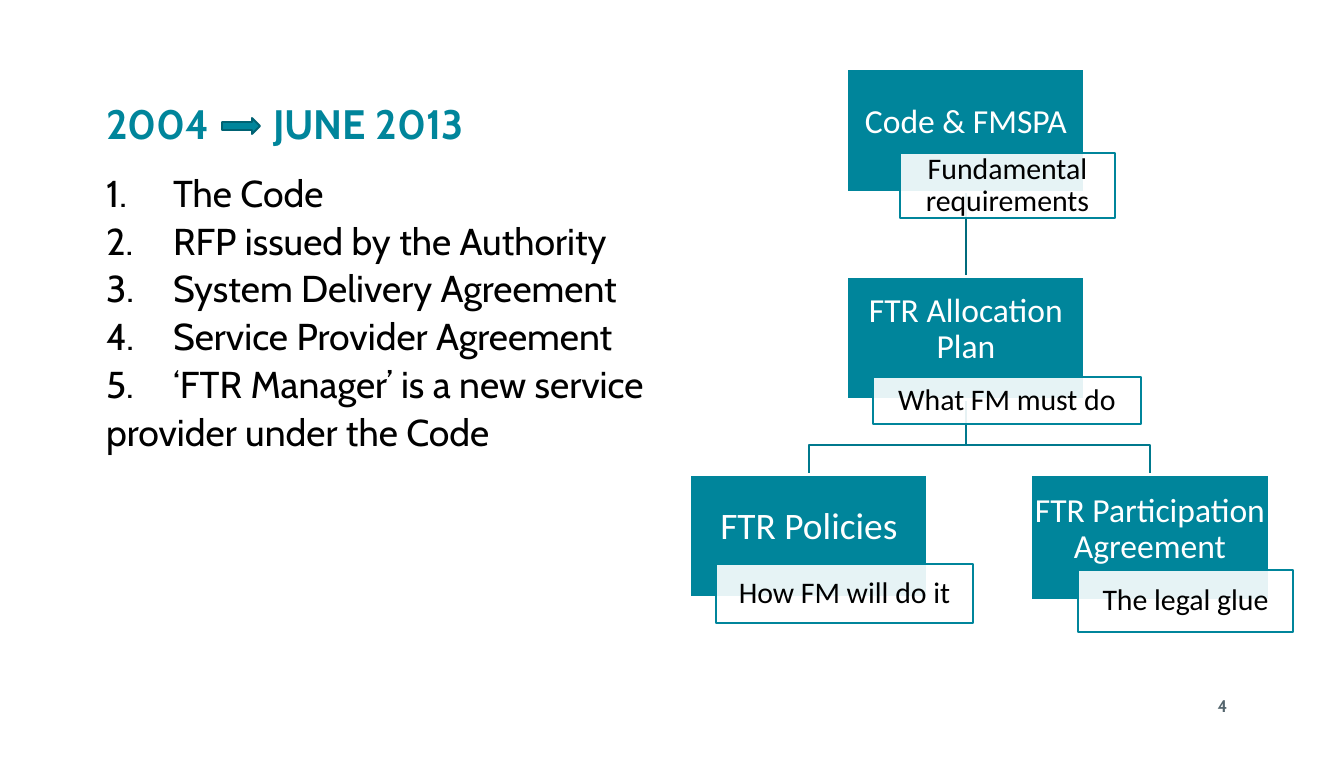
import dataclasses

import lxml.etree
import pptx
import pptx.dml.color
import pptx.enum.shapes
import pptx.enum.text
import pptx.oxml.ns
import pptx.util

RGB = pptx.dml.color.RGBColor.from_string
SHAPE = pptx.enum.shapes.MSO_SHAPE
ALIGN = pptx.enum.text.PP_ALIGN
ANCHOR = pptx.enum.text.MSO_ANCHOR
qn = pptx.oxml.ns.qn
PX = 914400 / 134.4  # EMU per px


@dataclasses.dataclass(frozen=True)
class Theme:
    teal: str = "00859B"
    teal_dark: str = "006273"
    branch: str = "00798D"
    trunk: str = "006B7C"
    white: str = "FFFFFF"
    black: str = "000000"
    grey: str = "54656D"
    heading: str = "Cabin"
    diagram: str = "Calibri"
    title: int = 22
    body: int = 20
    node: int = 18
    label: int = 16
    number: int = 9


theme = Theme()


def px(*lengths):
    return [pptx.util.Emu(round(n * PX)) for n in lengths]


def write(sp, text, size, color, font=theme.heading, bold=False, align=ALIGN.LEFT,
          anchor=ANCHOR.MIDDLE, insets=(13, 7, 13, 7), spacing=0.9, before=0,
          numbered=0, tab=0):
    """Fill a shape, one paragraph per line; the first `numbered` lines are a list."""
    tf = sp.text_frame
    tf.word_wrap = True
    tf.auto_size = pptx.enum.text.MSO_AUTO_SIZE.NONE
    tf.vertical_anchor = anchor
    tf.margin_left, tf.margin_top, tf.margin_right, tf.margin_bottom = px(*insets)
    for i, line in enumerate(text.split("\n")):
        p = tf.paragraphs[0] if i == 0 else tf.add_paragraph()
        pPr = p._p.get_or_add_pPr()
        if i < numbered:
            indent, = px(67)
            pPr.set("marL", str(indent))
            pPr.set("indent", str(-indent))
            lxml.etree.SubElement(pPr, qn("a:buFont"), typeface=font)
            lxml.etree.SubElement(pPr, qn("a:buAutoNum"), type="arabicPeriod")
        if tab:
            tabs = lxml.etree.SubElement(pPr, qn("a:tabLst"))
            lxml.etree.SubElement(tabs, qn("a:tab"), pos=str(px(tab)[0]), algn="l")
        p.alignment = align
        p.line_spacing = spacing
        p.space_before = pptx.util.Pt(before if i else 0)
        r = p.add_run()
        r.text = line
        r.font.name, r.font.size, r.font.bold = font, pptx.util.Pt(size), bold
        r.font.color.rgb = RGB(color)


prs = pptx.Presentation()
prs.slide_width, prs.slide_height = pptx.util.Inches(10), pptx.util.Inches(5.63)
s = prs.slides.add_slide(prs.slide_layouts[5])

# Title, list and page number
title = s.shapes.title
title.left, title.top, title.width, title.height = px(93, 84, 1025, 84)
write(title, "2004\tJUNE 2013", theme.title, theme.teal, bold=True, tab=167)

items = ["The Code", "RFP issued by the Authority", "System Delivery Agreement",
         "Service Provider Agreement", "‘FTR Manager’ is a new service",
         "provider under the Code"]
body = s.shapes.add_textbox(*px(93, 168, 1158, 466))
write(body, "\n".join(items), theme.body, theme.black, anchor=ANCHOR.TOP,
      before=4, numbered=5)

number = s.shapes.add_textbox(*px(1191, 685, 63, 40))
write(number, "4", theme.number, theme.grey, bold=True, align=ALIGN.CENTER, spacing=1)

# Hierarchy: box text, type size, box left, top and height, label text, label place
NODE_W = 238
NODE_H = 123
ROWS = (69, 276, 474)
nodes = [
    ("Code & FMSPA", theme.node, 847, ROWS[0], NODE_H,
     "Fundamental requirements", (900, 153, 215, 65)),
    ("FTR Allocation Plan", theme.node, 847, ROWS[1], NODE_H,
     "What FM must do", (873, 377, 268, 47)),
    ("FTR Policies", theme.body, 690, ROWS[2], NODE_H,
     "How FM will do it", (716, 564, 257, 59)),
    ("FTR Participation Agreement", theme.node, 1031, ROWS[2], 126,
     "The legal glue", (1078, 570, 215, 62)),
]
boxes = []
for text, size, left, top, height, label, place in nodes:
    box = s.shapes.add_shape(SHAPE.RECTANGLE, *px(left, top, NODE_W, height))
    box.fill.solid()
    box.fill.fore_color.rgb = RGB(theme.teal)
    box.line.color.rgb = RGB(theme.white)
    box.line.width = pptx.util.Pt(1.5)
    box.shadow.inherit = False
    write(box, text, size, theme.white, theme.diagram, align=ALIGN.CENTER,
          insets=(1, 1, 1, 17))
    boxes.append(box)

    tag = s.shapes.add_shape(SHAPE.RECTANGLE, *px(*place))
    tag.fill.solid()
    tag.fill.fore_color.rgb = RGB(theme.white)
    color = tag.fill._xPr.find(qn("a:solidFill"))[0]
    lxml.etree.SubElement(color, qn("a:alpha"), val="90000")
    tag.line.color.rgb = RGB(theme.teal)
    tag.line.width = pptx.util.Pt(1)
    tag.shadow.inherit = False
    write(tag, label, theme.label, theme.black, theme.diagram, align=ALIGN.CENTER,
          insets=(5, 1, 5, 1))

# Lines lie behind the boxes
code, plan = boxes[:2]
trunk = s.shapes.add_connector(pptx.enum.shapes.MSO_CONNECTOR.STRAIGHT, 0, 0, 0, 0)
trunk.begin_connect(code, 2)
trunk.end_connect(plan, 0)
trunk.line.color.rgb = RGB(theme.trunk)
trunk.line.width = pptx.util.Pt(1)
lxml.etree.SubElement(trunk._element.spPr, qn("a:effectLst"))
code._element.addprevious(trunk._element)

BUS_Y = 445
plan_x = nodes[1][2] + NODE_W // 2
for node in nodes[2:]:
    child_x = node[2] + NODE_W // 2
    path = s.shapes.build_freeform(plan_x, ROWS[1] + NODE_H, scale=PX)
    path.add_line_segments([(plan_x, BUS_Y), (child_x, BUS_Y), (child_x, ROWS[2])],
                           close=False)
    branch = path.convert_to_shape()
    branch.fill.background()
    branch.line.color.rgb = RGB(theme.branch)
    branch.line.width = pptx.util.Pt(1)
    branch.shadow.inherit = False
    code._element.addprevious(branch._element)

# Arrow between the two dates of the title
arrow = s.shapes.add_shape(SHAPE.RIGHT_ARROW, *px(222, 118, 38, 16))
arrow.fill.solid()
arrow.fill.fore_color.rgb = RGB(theme.teal)
arrow.line.color.rgb = RGB(theme.teal_dark)
arrow.line.width = pptx.util.Pt(1)
arrow.shadow.inherit = False

prs.save("out.pptx")
